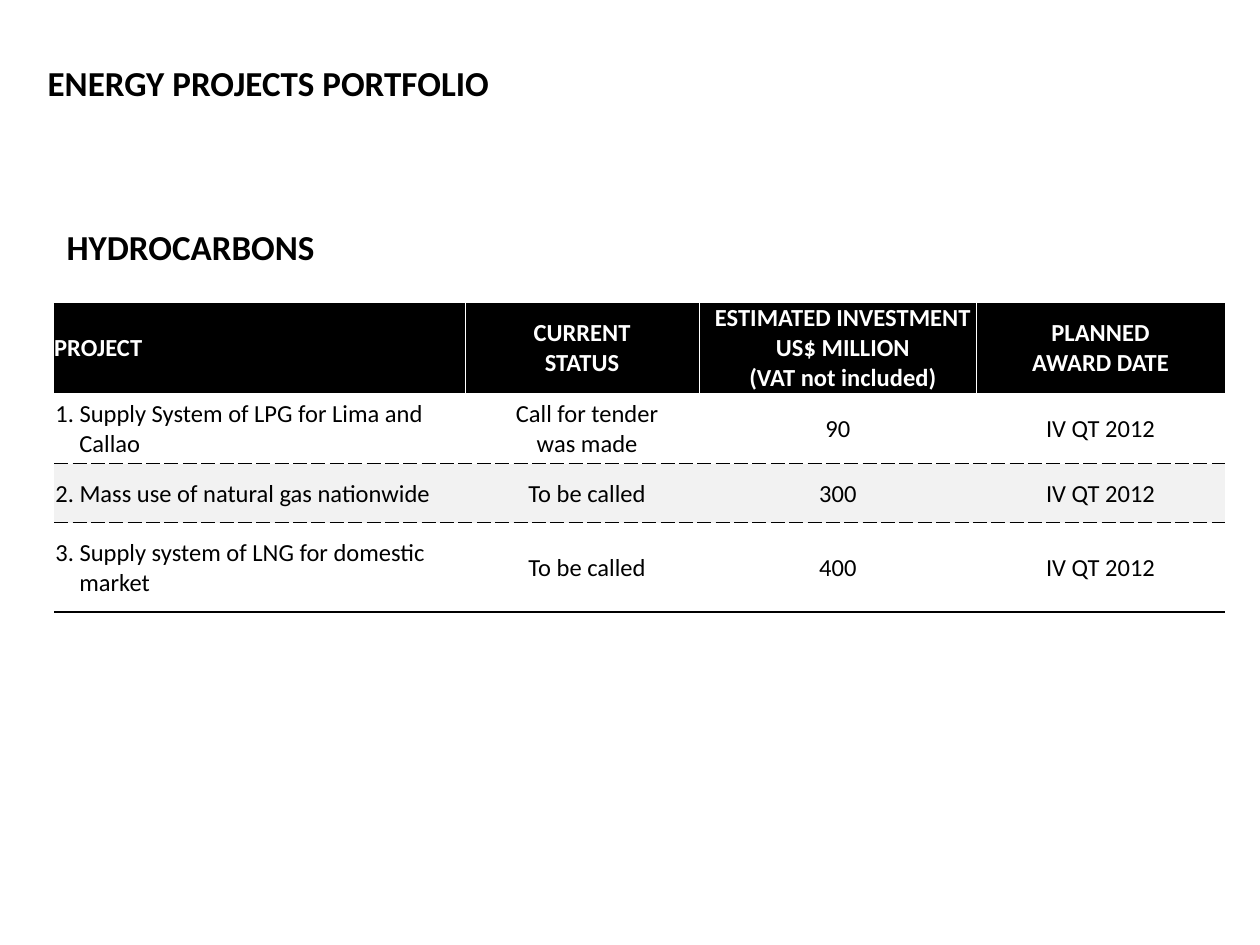
from lxml.etree import SubElement
from pptx import Presentation
from pptx.dml.color import RGBColor
from pptx.enum.text import MSO_ANCHOR, PP_ALIGN
from pptx.oxml.ns import qn
from pptx.util import Inches, Pt

COLORS = {"ink": "000000", "paper": "FFFFFF", "band": "F2F2F2"}
FONT = "Calibri"
NO_STYLE = "{2D5ABB26-0587-4C30-8999-92F81FD0307C}"

TITLES = [
    ("ENERGY PROJECTS PORTFOLIO", 0.28, 0.44, 5.91),
    ("HYDROCARBONS", 0.43, 1.74, 2.95),
]
# "\v" is a line break, "\n" a new paragraph
ROWS = [
    ("PROJECT", "CURRENT\vSTATUS",
     "ESTIMATED INVESTMENT\nUS$ MILLION\n(VAT not included)",
     "PLANNED\vAWARD DATE"),
    ("1. Supply System of LPG for Lima and Callao",
     "Call for tender\vwas made", "90", "IV QT 2012"),
    ("2. Mass use of natural gas nationwide", "To be called", "300", "IV QT 2012"),
    ("3. Supply system of LNG for domestic market", "To be called", "400", "IV QT 2012"),
]
LEFT, TOP = 0.43, 2.41
WIDTHS = [3.26, 1.86, 2.2, 1.97]
HEIGHTS = [0.71, 0.56, 0.47, 0.71]


def style(para, size, color, bold):
    font = para.font
    font.name, font.size, font.bold = FONT, Pt(size), bold
    font.color.rgb = RGBColor.from_string(COLORS[color])


def borders(cell, edges):
    """Draw edges given as {side: (color, points, dash)}."""
    props = cell._tc.get_or_add_tcPr()
    for side in "LRTB":  # the order the schema asks for
        if side in edges:
            color, width, dash = edges[side]
            line = SubElement(props, qn(f"a:ln{side}"), w=str(Pt(width)))
            fill = SubElement(line, qn("a:solidFill"))
            SubElement(fill, qn("a:srgbClr"), val=COLORS[color])
            SubElement(line, qn("a:prstDash"), val=dash)


def edges(row, col):
    last_row, last_col = len(ROWS) - 1, len(WIDTHS) - 1
    if row == 0:
        return {
            "L": ("paper" if col else "ink", 0.5, "solid"),
            "R": ("paper" if col < last_col else "ink", 0.5, "solid"),
            "T": ("ink", 0.5, "solid"),
        }
    dash = ("ink", 0.5, "sysDash")
    found = {"B": ("ink", 1, "solid") if row == last_row else dash}
    if row > 1:
        found["T"] = dash
    return found


def indent(para, left, first):
    props = para._p.get_or_add_pPr()
    props.set("marL", str(Inches(left)))
    props.set("indent", str(Inches(first)))


def fill_cell(cell, text, row, col):
    head = row == 0
    pad = 0 if head else 0.01
    cell.margin_left = Inches(0.09 if col == 1 and not head else pad)
    cell.margin_right = cell.margin_top = Inches(pad)
    cell.margin_bottom = 0
    cell.vertical_anchor = MSO_ANCHOR.MIDDLE
    borders(cell, edges(row, col))
    if head or row == 2:
        cell.fill.solid()
        cell.fill.fore_color.rgb = RGBColor.from_string(COLORS["ink" if head else "band"])
    else:
        cell.fill.background()
    cell.text_frame.text = text
    for para in cell.text_frame.paragraphs:
        para.alignment = PP_ALIGN.CENTER if col else PP_ALIGN.LEFT
        if head and col == 2:
            indent(para, 0.08, 0)
        elif not head and col == 0:
            indent(para, 0.19, -0.19)
        style(para, 14, "paper" if head else "ink", head)


def add_title(slide, text, left, top, width):
    box = slide.shapes.add_textbox(Inches(left), Inches(top), Inches(width), Inches(0.44))
    box.text_frame.word_wrap = True
    box.text_frame.text = text
    style(box.text_frame.paragraphs[0], 20, "ink", True)


def add_projects(slide):
    frame = slide.shapes.add_table(
        len(ROWS), len(WIDTHS), Inches(LEFT), Inches(TOP),
        Inches(sum(WIDTHS)), Inches(sum(HEIGHTS)))
    table = frame.table
    table._tbl.tblPr.find(qn("a:tableStyleId")).text = NO_STYLE
    table.horz_banding = False
    for col, width in zip(table.columns, WIDTHS):
        col.width = Inches(width)
    for row, height in zip(table.rows, HEIGHTS):
        row.height = Inches(height)
    for r, texts in enumerate(ROWS):
        for c, text in enumerate(texts):
            fill_cell(table.cell(r, c), text, r, c)


def main():
    deck = Presentation()
    deck.slide_width, deck.slide_height = Inches(10), Inches(7.5)
    slide = deck.slides.add_slide(deck.slide_layouts[6])
    for title in TITLES:
        add_title(slide, *title)
    add_projects(slide)
    deck.save("out.pptx")


if __name__ == "__main__":
    main()
